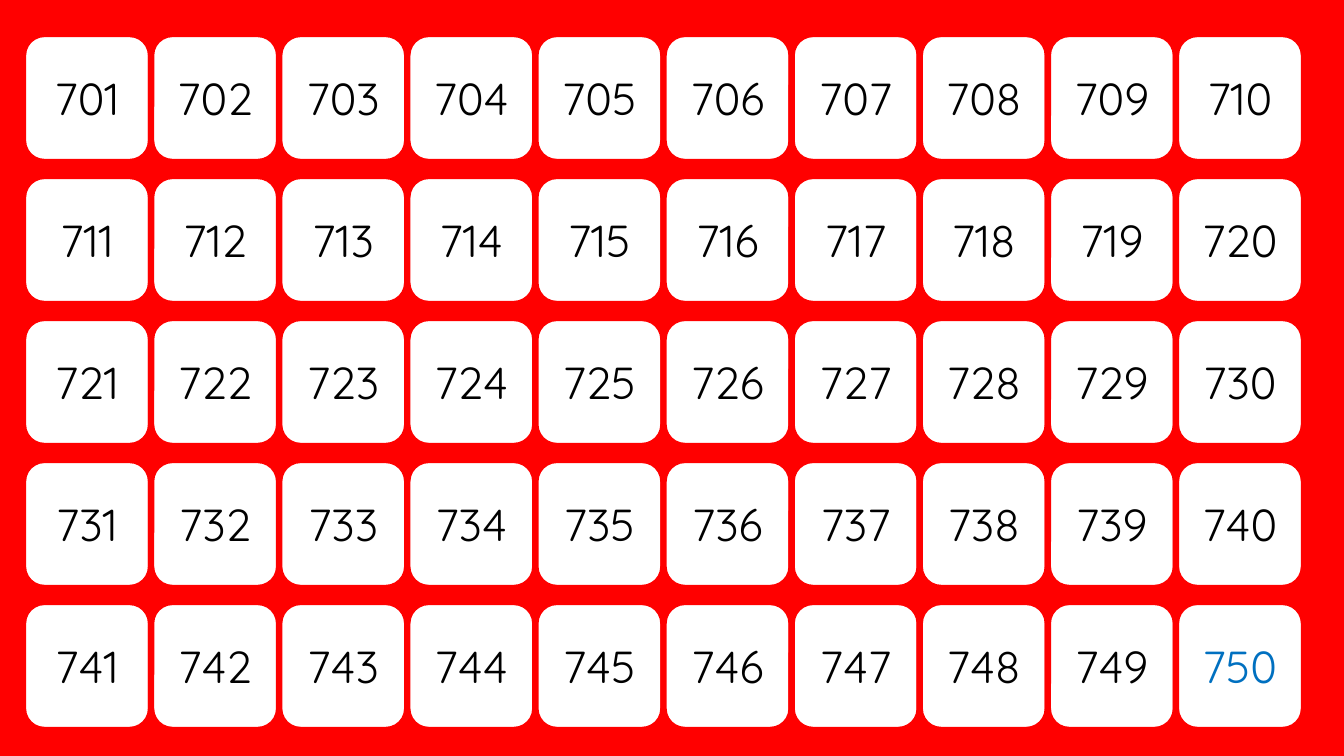
from pptx import Presentation
from pptx.dml.color import RGBColor
from pptx.enum.shapes import MSO_SHAPE
from pptx.enum.text import MSO_ANCHOR, PP_ALIGN
from pptx.util import Pt

EMU_PER_PX = 914400 / 100.8
ROUNDED = MSO_SHAPE.ROUNDED_RECTANGLE
MIDDLE = MSO_ANCHOR.MIDDLE
CENTER = PP_ALIGN.CENTER
BLANK_LAYOUT = 6

COLORS = {"red": "FF0000", "white": "FFFFFF", "black": "000000", "blue": "0070C0"}
NUMBER_FONT = {"name": "Quicksand", "size": Pt(32)}
FRAME_FORMAT = {"margin_left": 0, "margin_right": 0, "vertical_anchor": MIDDLE, "word_wrap": True}

FIRST_NUMBER, LAST_NUMBER = 701, 750
COLUMNS = 10
FIRST_LEFT, LAST_LEFT = 23, 1176
FIRST_TOP, ROW_PITCH = 34, 142
CARD_SIZE = 128


def px(length):
    return round(length * EMU_PER_PX)


def color(name):
    return RGBColor.from_string(COLORS[name])


def set_format(target, values):
    for name, value in values.items():
        setattr(target, name, value)


def paint_background(page, color_name):
    fill = page.background.fill
    fill.solid()
    fill.fore_color.rgb = color(color_name)


def add_card(page, number, left, top, text_color):
    card = page.shapes.add_shape(ROUNDED, px(left), px(top), px(CARD_SIZE), px(CARD_SIZE))
    card.name = f"Number {number}"
    card.shadow.inherit = False
    card.fill.solid()
    card.fill.fore_color.rgb = color("white")
    card.line.color.rgb = color("red")
    card.line.width = Pt(4.5)
    set_format(card.text_frame, FRAME_FORMAT)
    para = card.text_frame.paragraphs[0]
    para.alignment = CENTER
    span = para.add_run()
    span.text = str(number)
    set_format(span.font, NUMBER_FONT)
    span.font.color.rgb = color(text_color)


def add_number_grid(page):
    column_pitch = (LAST_LEFT - FIRST_LEFT) / (COLUMNS - 1)
    for number in range(FIRST_NUMBER, LAST_NUMBER + 1):
        row, column = divmod(number - FIRST_NUMBER, COLUMNS)
        left = FIRST_LEFT + column * column_pitch
        top = FIRST_TOP + row * ROW_PITCH
        add_card(page, number, left, top, "blue" if number == LAST_NUMBER else "black")


def main():
    deck = Presentation()
    deck.slide_width, deck.slide_height = px(1344), px(756)
    page = deck.slides.add_slide(deck.slide_layouts[BLANK_LAYOUT])
    paint_background(page, "red")
    add_number_grid(page)
    deck.save("out.pptx")


if __name__ == "__main__":
    main()
